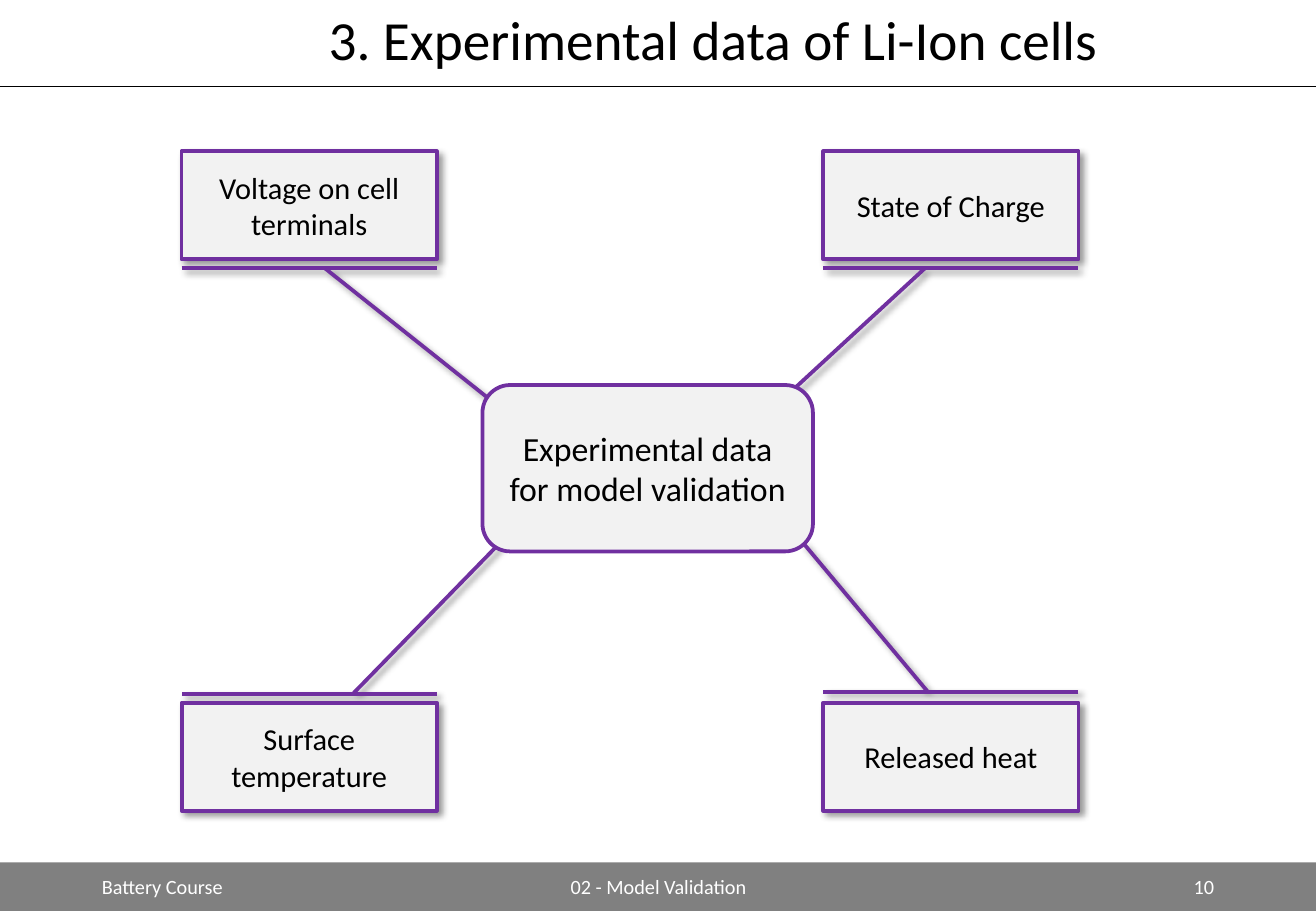
"""Build the slide on experimental data of Li-Ion cells."""
from lxml.etree import SubElement
from pptx import Presentation
from pptx.dml.color import RGBColor
from pptx.enum.shapes import MSO_CONNECTOR, MSO_SHAPE
from pptx.enum.text import MSO_ANCHOR, PP_ALIGN
from pptx.oxml.ns import qn
from pptx.util import Emu, Pt

PX = 9144
WIDTH, HEIGHT = 1083, 750
BLACK, WHITE, GREY, PALE, PURPLE = "000000", "FFFFFF", "808080", "F2F2F2", "7030A0"

TITLE = "3. Experimental data of Li-Ion cells"
CENTRE = "Experimental data for model validation"
FOOTERS = [
    ("Battery Course", 74, 244, PP_ALIGN.LEFT),
    ("02 - Model Validation", 359, 366, PP_ALIGN.CENTER),
    ("10", 765, 244, PP_ALIGN.RIGHT),
]
CALLOUTS = [
    ("Voltage on cell terminals", 0, 0, (0.56, -0.08, 1.21, -1.3)),
    ("State of Charge", 1, 0, (0.4, -0.08, -0.12, -1.21)),
    ("Released heat", 1, 1, (0.59, -0.1, 1.08, -1.48)),
    ("Surface temperature", 0, 1, (0.33, -0.08, -0.24, -1.46)),
]
CALLOUT_LEFTS, CALLOUT_TOPS = (210, 738), (64, 518)
CALLOUT_SIZE = (89, 210)
ROTATIONS, TEXT_DIRECTIONS = (270, 90), ("vert", "vert270")
RULE_TOP, FOOTER_TOP = 71, 710
FOOTER_HEIGHT = HEIGHT - FOOTER_TOP


def px(*lengths):
    return [Emu(length * PX) for length in lengths]


def colour(value):
    return RGBColor.from_string(value)


def write(shape, text, size=18, color=BLACK, align=PP_ALIGN.CENTER, spacing=None):
    frame = shape.text_frame
    frame.word_wrap = True
    frame.vertical_anchor = MSO_ANCHOR.MIDDLE
    paragraph = frame.paragraphs[0]
    paragraph.text = text
    paragraph.alignment = align
    paragraph.line_spacing = spacing
    paragraph.font.name = "Calibri"
    paragraph.font.size = Pt(size)
    paragraph.font.color.rgb = colour(color)


def add_box(slide, kind, box, fill, line=None):
    shape = slide.shapes.add_shape(kind, *px(*box))
    shape.shadow.inherit = False
    shape.fill.solid()
    shape.fill.fore_color.rgb = colour(fill)
    if line:
        shape.line.color.rgb = colour(line)
        shape.line.width = Pt(2.25)
    else:
        shape.line.fill.background()
    return shape


def add_shadow(shape):
    effects = shape.element.spPr.find(qn("a:effectLst"))
    shadow = SubElement(effects, qn("a:outerShdw"), blurRad=str(Pt(4)), dist=str(Pt(3)),
                        dir=str(45 * 60000), algn="tl", rotWithShape="0")
    shade = SubElement(shadow, qn("a:srgbClr"), val=BLACK)
    SubElement(shade, qn("a:alpha"), val="40000")


def add_callout(slide, text, column, row, adjustments):
    box = (CALLOUT_LEFTS[column], CALLOUT_TOPS[row], *CALLOUT_SIZE)
    callout = add_box(slide, MSO_SHAPE.LINE_CALLOUT_1_BORDER_AND_ACCENT_BAR, box, PALE, PURPLE)
    callout.rotation = ROTATIONS[row]
    for index, value in enumerate(adjustments):
        callout.adjustments[index] = value
    add_shadow(callout)
    write(callout, text)
    body = callout.element.find(".//" + qn("a:bodyPr"))
    body.set("vert", TEXT_DIRECTIONS[row])


def main():
    presentation = Presentation()
    presentation.slide_width, presentation.slide_height = px(WIDTH, HEIGHT)
    slide = presentation.slides.add_slide(presentation.slide_layouts[6])

    add_box(slide, MSO_SHAPE.RECTANGLE, (0, FOOTER_TOP, WIDTH, FOOTER_HEIGHT), GREY)
    rule = slide.shapes.add_connector(MSO_CONNECTOR.STRAIGHT, *px(0, RULE_TOP, WIDTH, RULE_TOP))
    rule.line.color.rgb = colour(BLACK)
    rule.line.width = Pt(0.5)
    SubElement(rule.element.spPr, qn("a:effectLst"))

    for text, left, width, align in FOOTERS:
        footer = slide.shapes.add_textbox(*px(left, FOOTER_TOP, width, FOOTER_HEIGHT))
        write(footer, text, size=12, color=WHITE, align=align)

    title = slide.shapes.add_textbox(*px(166, 0, 842, RULE_TOP))
    write(title, TITLE, size=32.7, spacing=0.9)

    for callout in CALLOUTS:
        add_callout(slide, *callout)
    centre = add_box(slide, MSO_SHAPE.ROUNDED_RECTANGLE, (397, 317, 272, 137), PALE, PURPLE)
    write(centre, CENTRE, size=20)

    presentation.save("out.pptx")


if __name__ == "__main__":
    main()
